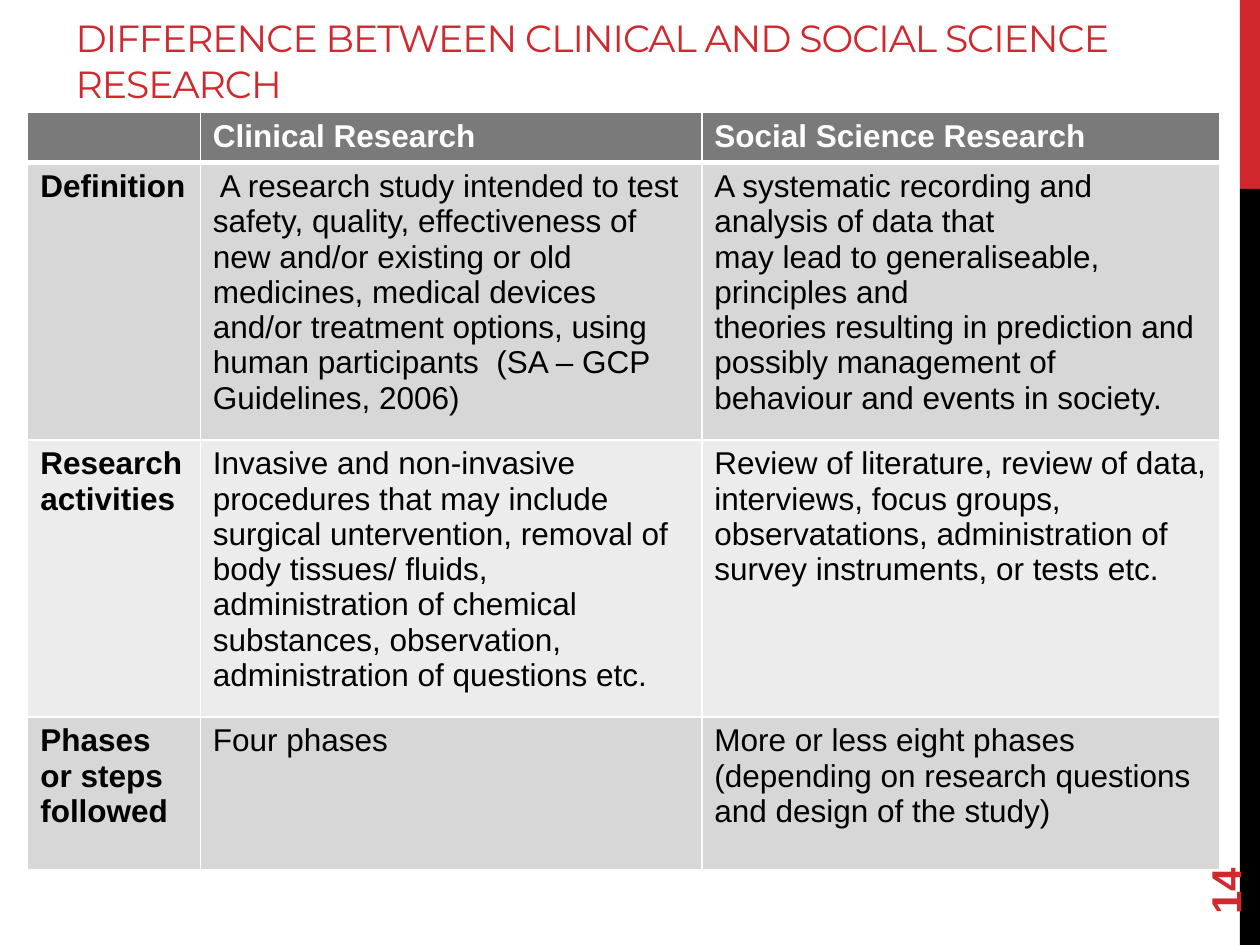
from lxml.etree import SubElement
from pptx import Presentation
from pptx.dml.color import RGBColor
from pptx.enum.shapes import MSO_SHAPE
from pptx.enum.text import MSO_ANCHOR, MSO_AUTO_SIZE, PP_ALIGN
from pptx.oxml.ns import qn
from pptx.util import Inches, Pt

RED, BLACK, WHITE = "D1282E", "000000", "FFFFFF"
HEADER_FILL, BAND_FILLS = "7A7A7A", ("D7D7D7", "ECECEC")

TITLE = "DIFFERENCE BETWEEN CLINICAL AND SOCIAL SCIENCE RESEARCH"
SLIDE_NUMBER = "14"
ROWS = [
    ("", "Clinical Research", "Social Science Research"),
    (
        "Definition",
        " A research study intended to test safety, quality, effectiveness of new and/or "
        "existing or old medicines, medical devices and/or treatment options, using human "
        "participants  (SA – GCP Guidelines, 2006)",
        "A systematic recording and analysis of data that\n"
        "may lead to generaliseable, principles and\n"
        "theories resulting in prediction and possibly management of\n"
        "behaviour and events in society.",
    ),
    (
        "Research activities",
        "Invasive and non-invasive procedures that may include surgical untervention, "
        "removal of body tissues/ fluids, administration of chemical substances, "
        "observation, administration of questions etc.",
        "Review of literature, review of data, interviews, focus groups, observatations, "
        "administration of survey instruments, or tests etc.",
    ),
    (
        "Phases or steps followed",
        "Four phases",
        "More or less eight phases (depending on research questions and design of the study)",
    ),
]
COLUMN_WIDTHS = (1.37, 3.98, 4.11)
ROW_HEIGHTS = (0.39, 2.12, 2.12, 1.21)
SIDE_BARS = [(0, 1.5, RED), (1.5, 6, BLACK)]


def color(value):
    return RGBColor.from_string(value)


def format_text(text_frame, size, font_name, font_color, bold=False):
    for paragraph in text_frame.paragraphs:
        paragraph.alignment = PP_ALIGN.LEFT
        for run in paragraph.runs:
            run.font.size = Pt(size)
            run.font.name = font_name
            run.font.bold = bold
            run.font.color.rgb = color(font_color)


def add_borders(cell, bottom_width):
    properties = cell._tc.get_or_add_tcPr()
    for side, width in (("L", 1), ("R", 1), ("T", 1), ("B", bottom_width)):
        line = SubElement(properties, qn(f"a:ln{side}"), w=str(Pt(width)))
        fill = SubElement(line, qn("a:solidFill"))
        SubElement(fill, qn("a:srgbClr"), val=WHITE)


def add_side_bars(slide):
    for top, height, fill in SIDE_BARS:
        bar = slide.shapes.add_shape(
            MSO_SHAPE.RECTANGLE, Inches(9.84), Inches(top), Inches(0.16), Inches(height)
        )
        bar.shadow.inherit = False
        bar.fill.solid()
        bar.fill.fore_color.rgb = color(fill)
        bar.line.fill.background()


def add_title(slide):
    title = slide.shapes.title
    title.left, title.top = Inches(0.5), Inches(0)
    title.width, title.height = Inches(9.02), Inches(0.89)
    text_frame = title.text_frame
    text_frame.text = TITLE
    text_frame.word_wrap = True
    text_frame.auto_size = MSO_AUTO_SIZE.NONE
    text_frame.vertical_anchor = MSO_ANCHOR.BOTTOM
    format_text(text_frame, 21.6, "Montserrat", RED)
    text_frame.paragraphs[0].runs[0].font._element.set("spc", "-60")


def add_slide_number(slide):
    box = slide.shapes.add_textbox(Inches(9), Inches(6.44), Inches(1.44), Inches(0.4))
    box.rotation = 270
    text_frame = box.text_frame
    text_frame.text = SLIDE_NUMBER
    text_frame.word_wrap = True
    text_frame.vertical_anchor = MSO_ANCHOR.MIDDLE
    format_text(text_frame, 24, "Arial", RED, bold=True)


def add_comparison_table(slide):
    table = slide.shapes.add_table(
        len(ROWS), len(COLUMN_WIDTHS), Inches(0.22), Inches(0.89),
        Inches(sum(COLUMN_WIDTHS)), Inches(sum(ROW_HEIGHTS)),
    ).table
    for column, width in zip(table.columns, COLUMN_WIDTHS):
        column.width = Inches(width)
    for row_index, texts in enumerate(ROWS):
        table.rows[row_index].height = Inches(ROW_HEIGHTS[row_index])
        is_header = row_index == 0
        fill = HEADER_FILL if is_header else BAND_FILLS[(row_index - 1) % 2]
        for column_index, text in enumerate(texts):
            cell = table.cell(row_index, column_index)
            add_borders(cell, 3 if is_header else 1)
            cell.fill.solid()
            cell.fill.fore_color.rgb = color(fill)
            cell.text_frame.text = text
            format_text(
                cell.text_frame, 18, "Arial", WHITE if is_header else BLACK,
                bold=is_header or column_index == 0,
            )


def main():
    presentation = Presentation()
    presentation.slide_width, presentation.slide_height = Inches(10), Inches(7.5)
    slide = presentation.slides.add_slide(presentation.slide_layouts[5])
    add_side_bars(slide)
    add_title(slide)
    add_slide_number(slide)
    add_comparison_table(slide)
    presentation.save("out.pptx")


if __name__ == "__main__":
    main()
